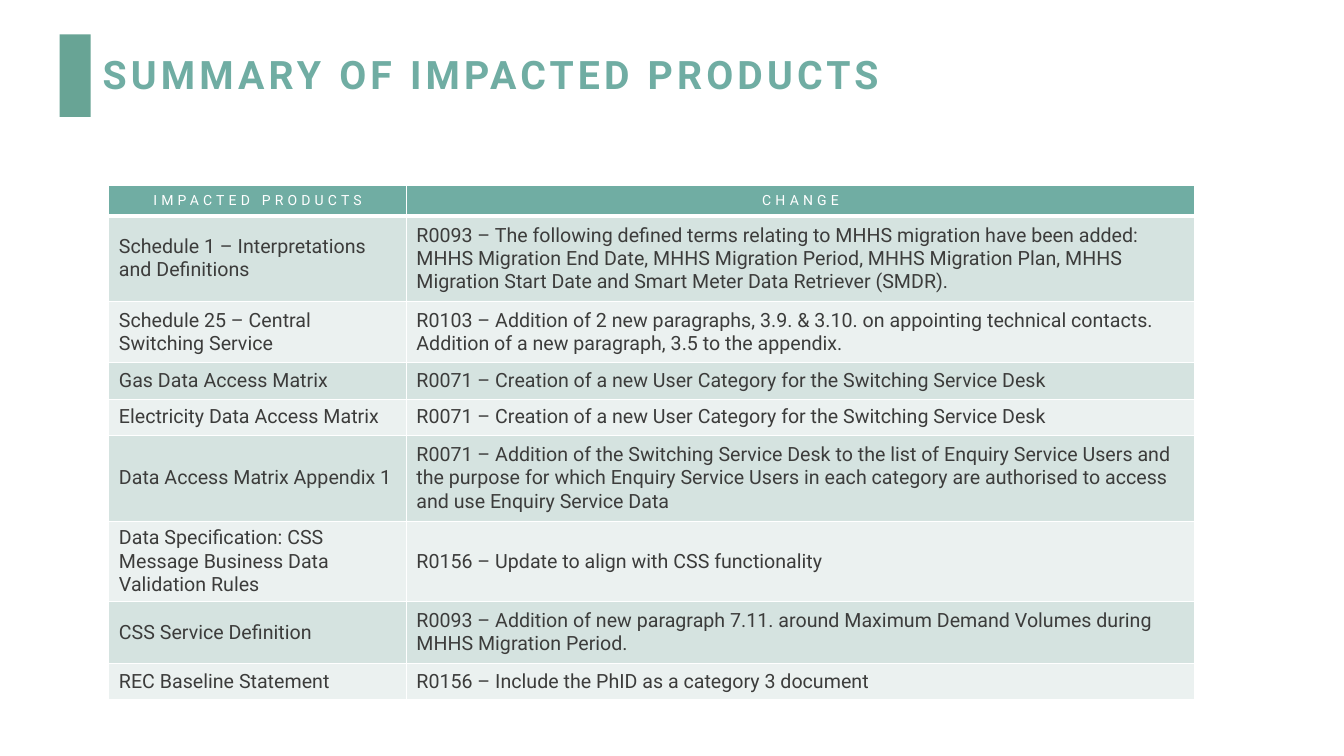
from typing import NamedTuple

from lxml import etree
from pptx import Presentation
from pptx.dml.color import RGBColor
from pptx.enum.shapes import MSO_SHAPE
from pptx.enum.text import MSO_ANCHOR, PP_ALIGN
from pptx.oxml.ns import qn
from pptx.util import Inches, Pt

RECT = MSO_SHAPE.RECTANGLE
MIDDLE = MSO_ANCHOR.MIDDLE
CENTER = PP_ALIGN.CENTER
LEFT = PP_ALIGN.LEFT

FONT = "Roboto"
COLORS = {
    "bar": "68A495",
    "teal": "70ADA3",
    "odd": "D5E3E0",
    "even": "EBF1F0",
    "ink": "3C3C3B",
    "white": "FFFFFF",
}


class Style(NamedTuple):
    size: int
    color: str
    bold: bool = False
    gap: int = 0


class Entry(NamedTuple):
    height: float
    product: str
    change: str


TITLE = Style(28, "teal", True, 3)
HEAD = Style(10, "white", gap=3)
BODY = Style(14, "ink")

WIDTHS = (2.95, 7.82)
DESK = "R0071 – Creation of a new User Category for the Switching Service Desk"
ENTRIES = [
    Entry(0.3, "IMPACTED PRODUCTS", "CHANGE"),
    Entry(0.85, "Schedule 1 – Interpretations and Definitions",
          "R0093 – The following defined terms relating to MHHS migration have been added: "
          "MHHS Migration End Date, MHHS Migration Period, MHHS Migration Plan, "
          "MHHS Migration Start Date and Smart Meter Data Retriever (SMDR)."),
    Entry(0.61, "Schedule 25 – Central Switching Service",
          "R0103 – Addition of 2 new paragraphs, 3.9. & 3.10. on appointing technical "
          "contacts. Addition of a new paragraph, 3.5 to the appendix."),
    Entry(0.36, "Gas Data Access Matrix", DESK),
    Entry(0.36, "Electricity Data Access Matrix", DESK),
    Entry(0.85, "Data Access Matrix Appendix 1",
          "R0071 – Addition of the Switching Service Desk to the list of Enquiry Service "
          "Users and the purpose for which Enquiry Service Users in each category are "
          "authorised to access and use Enquiry Service Data"),
    Entry(0.79, "Data Specification: CSS Message Business Data Validation Rules",
          "R0156 – Update to align with CSS functionality"),
    Entry(0.61, "CSS Service Definition",
          "R0093 – Addition of new paragraph 7.11. around Maximum Demand Volumes during "
          "MHHS Migration Period."),
    Entry(0.36, "REC Baseline Statement",
          "R0156 – Include the PhID as a category 3 document"),
]


def paint(fill, color: str) -> None:
    fill.solid()
    fill.fore_color.rgb = RGBColor.from_string(COLORS[color])


def write(para, text: str, style: Style) -> None:
    run = para.add_run()
    run.text = text
    font = run.font
    font.name = FONT
    font.size = Pt(style.size)
    font.bold = style.bold
    font.color.rgb = RGBColor.from_string(COLORS[style.color])
    run._r.get_or_add_rPr().set("spc", str(style.gap * 100))


def edge(cell, side: str, width: int) -> None:
    props = cell._tc.get_or_add_tcPr()
    line = etree.SubElement(props, qn(f"a:ln{side}"), w=str(Pt(width)))
    solid = etree.SubElement(line, qn("a:solidFill"))
    etree.SubElement(solid, qn("a:srgbClr"), val=COLORS["white"])


def draw_cell(cell, text: str, row: int) -> None:
    head = row == 0
    for side in "LRTB":
        edge(cell, side, 3 if head and side == "B" else 1)
    paint(cell.fill, "teal" if head else "odd" if row % 2 else "even")
    cell.vertical_anchor = MIDDLE
    para = cell.text_frame.paragraphs[0]
    para.alignment = CENTER if head else LEFT
    write(para, text, HEAD if head else BODY)


def draw_title(slide) -> None:
    bar = slide.shapes.add_shape(
        RECT, Inches(0.59), Inches(0.34), Inches(0.31), Inches(0.82))
    bar.shadow.inherit = False
    paint(bar.fill, "bar")
    bar.line.fill.background()
    box = slide.shapes.add_textbox(
        Inches(0.92), Inches(0.4), Inches(10.15), Inches(0.72))
    frame = box.text_frame
    frame.word_wrap = True
    frame.vertical_anchor = MIDDLE
    para = frame.paragraphs[0]
    para.line_spacing = 0.9
    write(para, "SUMMARY OF IMPACTED PRODUCTS", TITLE)


def draw_table(slide) -> None:
    height = sum(entry.height for entry in ENTRIES)
    table = slide.shapes.add_table(
        len(ENTRIES), len(WIDTHS), Inches(1.08), Inches(1.84),
        Inches(sum(WIDTHS)), Inches(height)).table
    for col, width in zip(table.columns, WIDTHS):
        col.width = Inches(width)
    for row, entry in enumerate(ENTRIES):
        table.rows[row].height = Inches(entry.height)
        for col, text in enumerate((entry.product, entry.change)):
            draw_cell(table.cell(row, col), text, row)


def main() -> None:
    deck = Presentation()
    deck.slide_width = Inches(13.33)
    deck.slide_height = Inches(7.5)
    slide = deck.slides.add_slide(deck.slide_layouts[6])
    draw_title(slide)
    draw_table(slide)
    deck.save("out.pptx")


if __name__ == "__main__":
    main()
